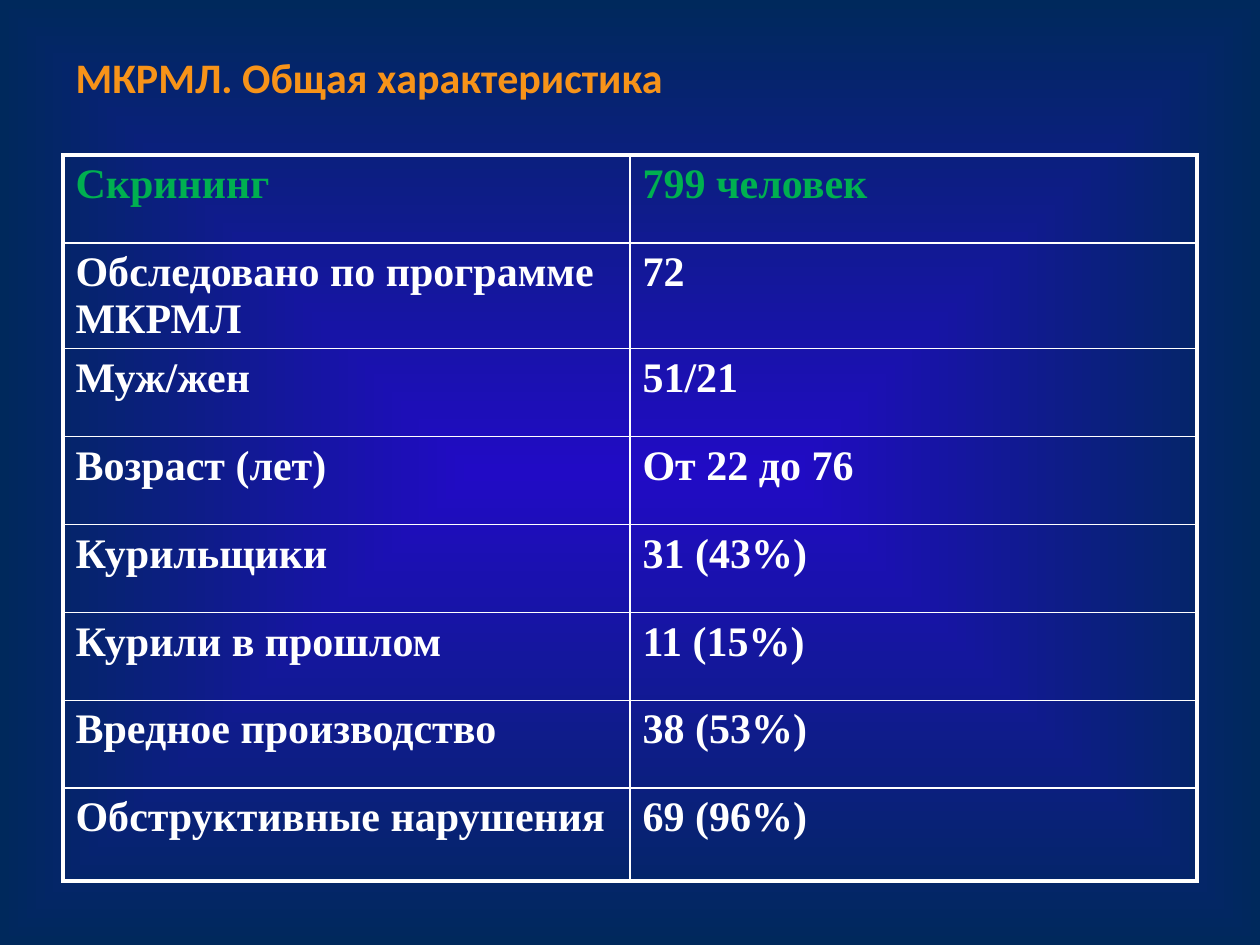
from lxml.etree import SubElement
from pptx import Presentation
from pptx.dml.color import RGBColor
from pptx.enum.text import MSO_ANCHOR, PP_ALIGN
from pptx.oxml.ns import qn
from pptx.util import Pt

PX = 914400 // 126
ORANGE = RGBColor(0xF7, 0x93, 0x19)
GREEN = RGBColor(0x00, 0xB0, 0x50)
WHITE = RGBColor(0xFF, 0xFF, 0xFF)
BRIGHT_BLUE = RGBColor(0x21, 0x0B, 0xC5)
DARK_BLUE = RGBColor(0x00, 0x29, 0x5C)
THIN, THICK = Pt(1), Pt(2.25)

LEFT, WIDTH = 63, 1134
TABLE_TOP = 155
ROW_HEIGHT, TALL_ROW_HEIGHT = 88, 93
TALL_ROWS = (1, 7)

TITLE = "МКРМЛ. Общая характеристика"
ROWS = [
    ("Скрининг", "799 человек"),
    ("Обследовано по программе МКРМЛ", "72"),
    ("Муж/жен", "51/21"),
    ("Возраст (лет)", "От 22 до 76"),
    ("Курильщики", "31 (43%)"),
    ("Курили в прошлом", "11 (15%)"),
    ("Вредное производство", "38 (53%)"),
    ("Обструктивные нарушения", "69 (96%)"),
]


def px(*lengths):
    return [length * PX for length in lengths]


def format_font(paragraph, name, color):
    font = paragraph.font
    font.name = name
    font.size = Pt(24)
    font.bold = True
    font.color.rgb = color


def set_background(slide):
    """Fill the slide with a gradient that spreads from its centre."""
    fill = slide.background.fill
    fill.gradient()
    for stop, color in zip(fill.gradient_stops, (BRIGHT_BLUE, DARK_BLUE)):
        stop.color.rgb = color
    gradient = slide.element.find(".//" + qn("a:gradFill"))
    linear = gradient.find(qn("a:lin"))
    if linear is not None:
        gradient.remove(linear)
    gradient_path = SubElement(gradient, qn("a:path"), path="shape")
    SubElement(gradient_path, qn("a:fillToRect"),
               dict.fromkeys("ltrb", "50000"))


def set_title(slide):
    title = slide.shapes.title
    title.left, title.top, title.width, title.height = px(LEFT, 38, WIDTH, 77)
    frame = title.text_frame
    frame.text = TITLE
    frame.vertical_anchor = MSO_ANCHOR.MIDDLE
    paragraph = frame.paragraphs[0]
    paragraph.alignment = PP_ALIGN.LEFT
    format_font(paragraph, "Calibri", ORANGE)


def set_borders(cell, outer_sides):
    """Draw white borders, thick on the outer sides of the table."""
    properties = cell._tc.get_or_add_tcPr()
    for side in "LRTB":
        width = THICK if side in outer_sides else THIN
        line = SubElement(properties, qn(f"a:ln{side}"), w=str(width))
        fill = SubElement(line, qn("a:solidFill"))
        SubElement(fill, qn("a:srgbClr"), val=str(WHITE))


def set_space_before(paragraph, percent):
    properties = paragraph._p.get_or_add_pPr()
    spacing = SubElement(properties, qn("a:spcBef"))
    SubElement(spacing, qn("a:spcPct"), val=str(percent * 1000))


def fill_cell(cell, text, color, outer_sides):
    cell.text = text
    paragraph = cell.text_frame.paragraphs[0]
    set_space_before(paragraph, 20)
    format_font(paragraph, "Times New Roman", color)
    set_borders(cell, outer_sides)
    cell.fill.background()


def add_data_table(slide):
    heights = [TALL_ROW_HEIGHT if i in TALL_ROWS else ROW_HEIGHT
               for i in range(len(ROWS))]
    table = slide.shapes.add_table(
        len(ROWS), 2, *px(LEFT, TABLE_TOP, WIDTH, sum(heights))).table
    table.first_row = table.horz_banding = False
    last = len(ROWS) - 1
    for i, (texts, height) in enumerate(zip(ROWS, heights)):
        table.rows[i].height = height * PX
        color = GREEN if i == 0 else WHITE
        row_sides = {0: "T", last: "B"}.get(i, "")
        for j, (text, column_side) in enumerate(zip(texts, "LR")):
            fill_cell(table.cell(i, j), text, color, row_sides + column_side)


def main():
    presentation = Presentation()
    presentation.slide_width, presentation.slide_height = px(1260, 945)
    slide = presentation.slides.add_slide(presentation.slide_layouts[5])
    set_background(slide)
    set_title(slide)
    add_data_table(slide)
    presentation.save("out.pptx")


if __name__ == "__main__":
    main()
